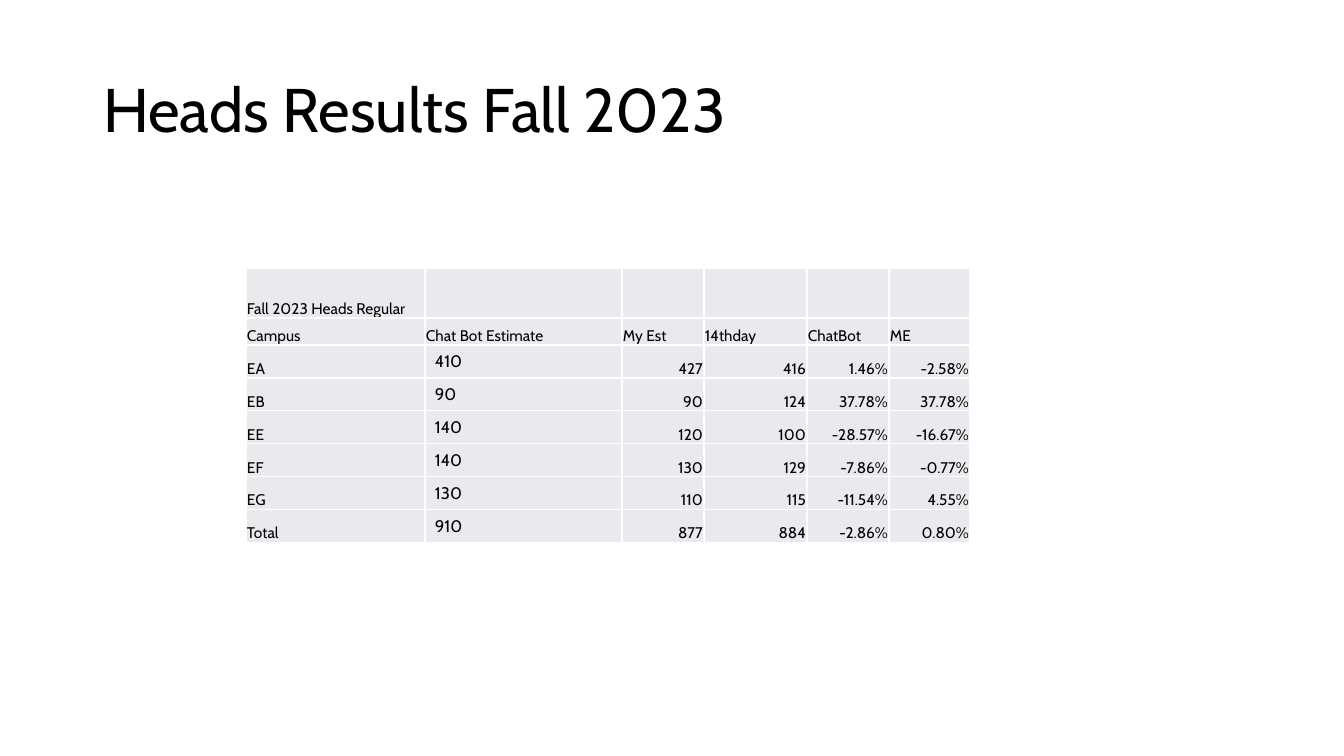
from dataclasses import dataclass

from lxml import etree
from pptx import Presentation
from pptx.dml.color import RGBColor
from pptx.enum.text import MSO_ANCHOR, PP_ALIGN
from pptx.oxml.ns import qn
from pptx.util import Pt

MIDDLE, BOTTOM = MSO_ANCHOR.MIDDLE, MSO_ANCHOR.BOTTOM
LEFT, RIGHT = PP_ALIGN.LEFT, PP_ALIGN.RIGHT
TITLE_ONLY = 5
EMU_PER_PX = 914400 / 100.8


@dataclass(frozen=True)
class Theme:
    font: str = "Cabin"
    ink: str = "000000"
    cell: str = "E8EAED"
    border: str = "FFFFFF"
    title_size: int = 44
    table_size: int = 11
    estimate_size: int = 12


THEME = Theme()

# Table content and measures in px
ESTIMATE_COLUMN = 1
HEADER_ROWS = 2
COLUMN_WIDTHS = [179, 197, 82, 103, 82, 81]
ROW_HEIGHTS = [50, 27] + [33] * 6
RESULTS = [
    ["Fall 2023 Heads Regular", "", "", "", "", ""],
    ["Campus", "Chat Bot Estimate", "My Est", "14thday", "ChatBot", "ME"],
    ["EA", "410", "427", "416", "1.46%", "-2.58%"],
    ["EB", "90", "90", "124", "37.78%", "37.78%"],
    ["EE", "140", "120", "100", "-28.57%", "-16.67%"],
    ["EF", "140", "130", "129", "-7.86%", "-0.77%"],
    ["EG", "130", "110", "115", "-11.54%", "4.55%"],
    ["Total", "910", "877", "884", "-2.86%", "0.80%"],
]


def px(length):
    return round(length * EMU_PER_PX)


def format_font(font, size):
    font.name = THEME.font
    font.size = Pt(size)
    font.color.rgb = RGBColor.from_string(THEME.ink)


def add_title(page, box, text):
    title = page.shapes.title
    title.left, title.top, title.width, title.height = map(px, box)
    frame = title.text_frame
    frame.text = text
    frame.vertical_anchor = MIDDLE
    para = frame.paragraphs[0]
    para.alignment = LEFT
    para.line_spacing = 0.9
    format_font(para.runs[0].font, THEME.title_size)


def add_borders(cell):
    # Border lines come before the fill in the cell properties
    properties = cell._tc.get_or_add_tcPr()
    for index, side in enumerate(("a:lnL", "a:lnR", "a:lnT", "a:lnB")):
        line = etree.Element(qn(side), w=str(Pt(1)))
        fill = etree.SubElement(line, qn("a:solidFill"))
        etree.SubElement(fill, qn("a:srgbClr"), val=THEME.border)
        properties.insert(index, line)


def fill_cell(cell, text, row, column):
    is_data = row >= HEADER_ROWS
    is_estimate = is_data and column == ESTIMATE_COLUMN
    cell.fill.solid()
    cell.fill.fore_color.rgb = RGBColor.from_string(THEME.cell)
    add_borders(cell)
    cell.margin_left = px(10 if is_estimate else 1)
    cell.margin_right = cell.margin_top = px(1)
    cell.margin_bottom = 0
    cell.vertical_anchor = MIDDLE if is_estimate else BOTTOM
    cell.text = text
    para = cell.text_frame.paragraphs[0]
    para.alignment = RIGHT if is_data and column > ESTIMATE_COLUMN else LEFT
    size = THEME.estimate_size if is_estimate else THEME.table_size
    format_font(para.font, size)
    for span in para.runs:
        format_font(span.font, size)


def add_results_table(page, box):
    frame = page.shapes.add_table(len(RESULTS), len(COLUMN_WIDTHS), *map(px, box))
    table = frame.table
    table.first_row = table.horz_banding = False
    for column, width in zip(table.columns, COLUMN_WIDTHS):
        column.width = px(width)
    for row, height in zip(table.rows, ROW_HEIGHTS):
        row.height = px(height)
    for row, texts in enumerate(RESULTS):
        for column, text in enumerate(texts):
            fill_cell(table.cell(row, column), text, row, column)


def main():
    deck = Presentation()
    deck.slide_width, deck.slide_height = px(1344), px(756)
    page = deck.slides.add_slide(deck.slide_layouts[TITLE_ONLY])
    add_title(page, (93, 40, 1159, 146), "Heads Results Fall 2023")
    add_results_table(page, (246, 268, sum(COLUMN_WIDTHS), sum(ROW_HEIGHTS)))
    deck.save("out.pptx")


if __name__ == "__main__":
    main()
